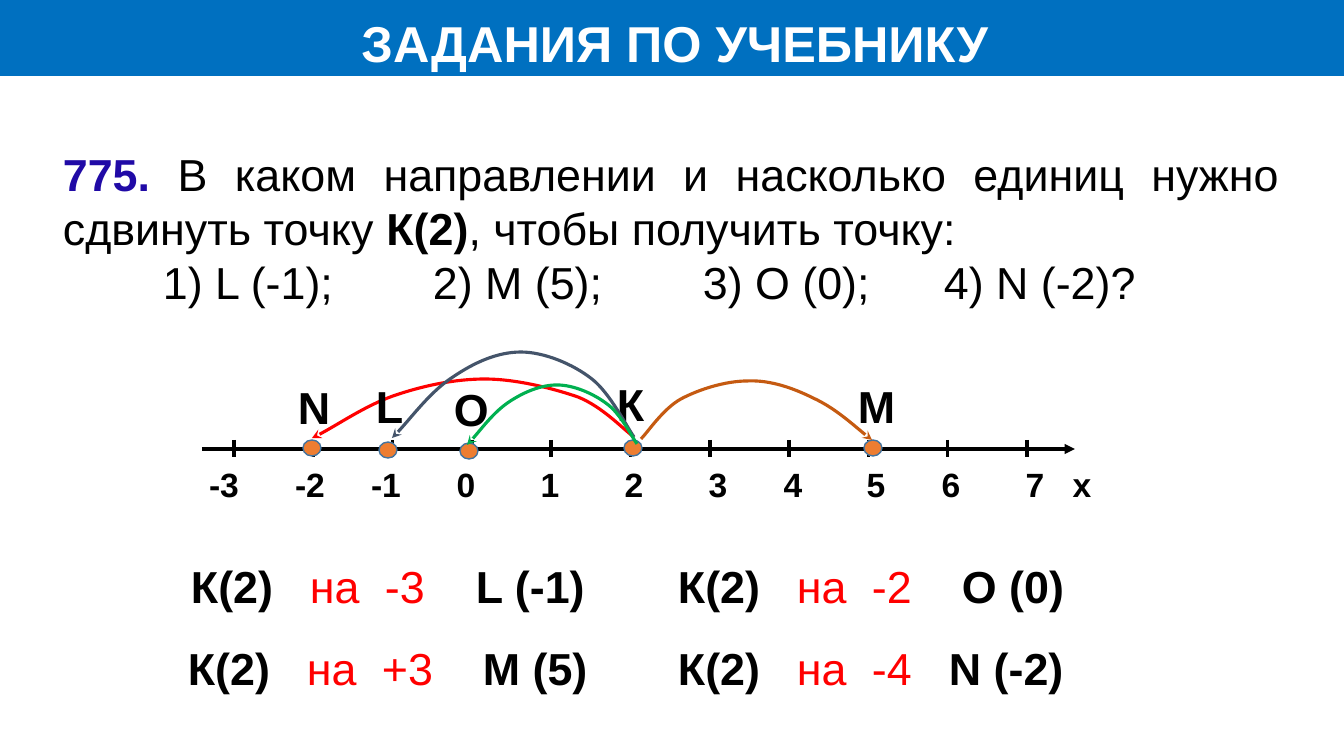
from lxml.etree import SubElement
from pptx import Presentation
from pptx.dml.color import RGBColor
from pptx.enum.shapes import MSO_CONNECTOR as Link, MSO_SHAPE as Form
from pptx.enum.text import MSO_ANCHOR as Anchor, MSO_AUTO_SIZE as Auto, PP_ALIGN as Align
from pptx.oxml.ns import qn
from pptx.util import Pt

PX = 914400 / 100.8
BLACK = RGBColor(0x00, 0x00, 0x00)
WHITE = RGBColor(0xFF, 0xFF, 0xFF)
BLUE = RGBColor(0x00, 0x70, 0xC0)
INDIGO = RGBColor(0x20, 0x0A, 0xA6)
RED = RGBColor(0xFF, 0x00, 0x00)
SLATE = RGBColor(0x44, 0x54, 0x6A)
BROWN = RGBColor(0xC5, 0x5A, 0x11)
GREEN = RGBColor(0x00, 0xB0, 0x50)
ORANGE = RGBColor(0xED, 0x7D, 0x31)
STEEL = RGBColor(0x43, 0x73, 0x9E)

TITLE = "ЗАДАНИЯ ПО УЧЕБНИКУ"
TASK = [("775. ", INDIGO, True),
        ("В каком направлении и насколько единиц нужно сдвинуть точку ", BLACK, False),
        ("К(2)", BLACK, True), (", чтобы получить точку: ", BLACK, False)]
PARTS = ["1) L (-1);", "2) M (5);", "3) O (0);", "4) N (-2)?"]
PART_TABS = [100, 370, 640, 881]
MARKS = {"-3": 62, "-2": 148, "-1": 224, "0": 304, "1": 388, "2": 472,
         "3": 556, "4": 631, "5": 714, "6": 789, "7": 873, "х": 920}

# letter, letter place, dot place, arc colour, arc nodes
POINTS = [
    ("К", (607, 372), (624, 440), None, []),
    ("N", (288, 375), (303, 440), RED,
     [(634, 437), (624, 430), (603, 407), (578, 397), (552, 388), (515, 379), (485, 379),
      (454, 379), (422, 386), (393, 396), (365, 406), (330, 430), (312, 438)]),
    ("L", (366, 374), (379, 442), SLATE,
     [(634, 437), (627, 427), (610, 393), (592, 379), (573, 364), (544, 352), (521, 352),
      (498, 352), (475, 362), (453, 377), (431, 391), (405, 426), (392, 438)]),
    ("М", (848, 374), (864, 440), BROWN,
     [(641, 439), (648, 432), (663, 409), (681, 399), (700, 389), (726, 381), (748, 381),
      (770, 380), (793, 388), (813, 398), (835, 408), (860, 431), (872, 440)]),
    ("О", (444, 377), (460, 443), GREEN,
     [(637, 444), (632, 437), (620, 413), (607, 404), (594, 394), (574, 385), (557, 385),
      (541, 385), (524, 392), (509, 402), (494, 412), (476, 436), (467, 445)]),
]
MOVES = [("-3", "L (-1)", 181, 554, 285), ("+3", "M (5)", 178, 636, 295),
         ("-2", "О (0)", 668, 554, 284), ("-4", "N (-2)", 668, 636, 271)]


def px(*vals):
    return [round(v * PX) for v in vals]


def write(frame, runs, size=32, align=Align.LEFT, tabs=(), stop="l", more=False):
    """Put formatted runs in one paragraph of a text frame."""
    para = frame.add_paragraph() if more else frame.paragraphs[0]
    para.alignment = align
    if tabs:
        stops = SubElement(para._p.get_or_add_pPr(), qn("a:tabLst"))
        for pos in px(*tabs):
            SubElement(stops, qn("a:tab"), pos=str(pos), algn=stop)
    for text, color, bold in runs:
        run = para.add_run()
        run.text = text
        font = run.font
        font.name, font.size, font.bold = "Arial", Pt(size), bold
        font.color.rgb = color


def box(shapes, *place):
    frame = shapes.add_textbox(*px(*place)).text_frame
    frame.word_wrap = True
    return frame


def solid(shapes, form, place, fill, edge=None, width=1):
    shape = shapes.add_shape(form, *px(*place))
    shape.shadow.inherit = False
    shape.fill.solid()
    shape.fill.fore_color.rgb = fill
    if edge is None:
        shape.line.fill.background()
    else:
        shape.line.color.rgb = edge
        shape.line.width = Pt(width)
    return shape


def tip(line, kind):
    SubElement(line._get_or_add_ln(), qn("a:tailEnd"), type=kind)


def rule(shapes, *ends):
    link = shapes.add_connector(Link.STRAIGHT, *px(*ends))
    link.line.color.rgb = BLACK
    link.line.width = Pt(2.5)
    SubElement(link.element.spPr, qn("a:effectLst"))
    return link


def arc(shapes, nodes, color):
    pen = shapes.build_freeform(*nodes[0], scale=PX)
    pen.add_line_segments(nodes[1:], close=False)
    shape = pen.convert_to_shape()
    shape.shadow.inherit = False
    shape.fill.background()
    shape.line.color.rgb = color
    shape.line.width = Pt(2.25)
    tip(shape.line, "stealth")
    track = shape.element.find(".//" + qn("a:path"))
    legs = track.findall(qn("a:lnTo"))
    for i in range(0, len(legs), 3):
        curve = SubElement(track, qn("a:cubicBezTo"))
        for leg in legs[i:i + 3]:
            curve.append(leg[0])
            track.remove(leg)


def head(shapes):
    bar = solid(shapes, Form.RECTANGLE, (0, 0, 1345, 76), BLUE)
    title = shapes.title
    bar.element.addnext(title.element)
    title.left, title.top, title.width, title.height = px(3, 7, 1344, 72)
    frame = title.text_frame
    frame.auto_size = Auto.NONE
    frame.vertical_anchor = Anchor.TOP
    write(frame, [(TITLE, WHITE, True)], size=36, align=Align.CENTER)


def axis(shapes):
    base = solid(shapes, Form.RECTANGLE, (152, 419, 945, 101), WHITE, WHITE, 0.75)
    frame = base.text_frame
    frame.vertical_anchor = Anchor.BOTTOM
    frame.margin_left, frame.margin_right, frame.margin_bottom = px(10, 0, 16)
    marks = "".join("\t" + mark for mark in MARKS)
    write(frame, [(marks, BLACK, True)], size=24, tabs=MARKS.values(), stop="ctr")
    tip(rule(shapes, 202, 449, 1075, 449).line, "triangle")
    for i in range(11):
        x = 234 + 793 * i / 10
        rule(shapes, x, 440, x, 457)


def main():
    deck = Presentation()
    deck.slide_width, deck.slide_height = px(1344, 756)
    shapes = deck.slides.add_slide(deck.slide_layouts[5]).shapes
    head(shapes)

    frame = box(shapes, 53, 142, 1237, 173)
    write(frame, TASK, align=Align.JUSTIFY)
    parts = "".join("\t" + part for part in PARTS)
    write(frame, [(parts, BLACK, False)], align=Align.JUSTIFY, tabs=PART_TABS, more=True)

    axis(shapes)
    for name, spot, dot, color, nodes in POINTS:
        solid(shapes, Form.OVAL, (*dot, 18, 16), ORANGE, STEEL)
        if nodes:
            arc(shapes, nodes, color)
        write(box(shapes, *spot, 47, 64), [(name, BLACK, True)])

    for step, goal, x, y, tab in MOVES:
        runs = [("К(2)\t", BLACK, True), (f"на\t{step}\t", RED, False), (goal, BLACK, True)]
        write(box(shapes, x, y, 428, 64), runs, tabs=(119, 194, tab))
    deck.save("out.pptx")


if __name__ == "__main__":
    main()
